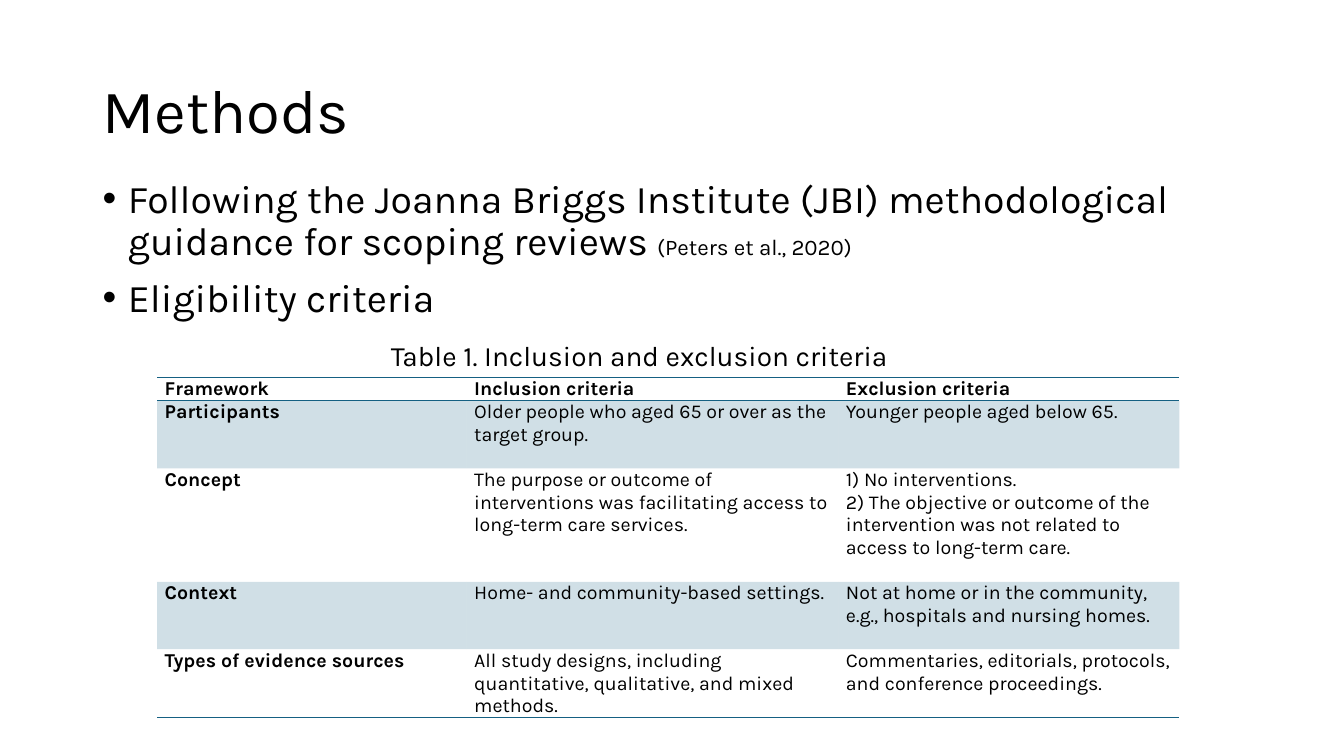
from lxml import etree
from pptx import Presentation
from pptx.dml.color import RGBColor
from pptx.enum import text
from pptx.oxml import ns
from pptx.util import Cm, Pt

BLACK = RGBColor(0, 0, 0)
BLUE = RGBColor(0x15, 0x60, 0x82)
FONT = "Karla"
NO_STYLE = "{2D5ABB26-0587-4C30-8999-92F81FD0307C}"

COLUMN_WIDTHS = [7.8, 9.37, 8.59]
ROW_HEIGHTS = [0.58, 1.7, 2.86, 1.7, 1.7]
CRITERIA = [
    ["Framework", "Inclusion criteria", "Exclusion criteria"],
    ["Participants",
     "Older people who aged 65 or over as the target group.",
     "Younger people aged below 65."],
    ["Concept",
     "The purpose or outcome of interventions was facilitating access to "
     "long-term care services.",
     "1) No interventions.\n2) The objective or outcome of the intervention "
     "was not related to access to long-term care."],
    ["Context",
     "Home- and community-based settings.",
     "Not at home or in the community, e.g., hospitals and nursing homes."],
    ["Types of evidence sources",
     "All study designs, including quantitative, qualitative, and mixed methods.",
     "Commentaries, editorials, protocols, and conference proceedings."],
]


def place(sp, left, top, width, height):
    sp.left, sp.top, sp.width, sp.height = map(Cm, (left, top, width, height))


def add_run(p, words, size, bold=False):
    r = p.add_run()
    r.text = words
    r.font.name = FONT
    r.font.size = Pt(size)
    r.font.bold = bold
    r.font.color.rgb = BLACK


def next_paragraph(tf, index):
    return tf.add_paragraph() if index else tf.paragraphs[0]


def fill_title(sp, words):
    place(sp, 2.33, 1.01, 29.21, 3.68)
    tf = sp.text_frame
    tf.auto_size = text.MSO_AUTO_SIZE.NONE
    tf.vertical_anchor = text.MSO_ANCHOR.MIDDLE
    p = tf.paragraphs[0]
    p.alignment = text.PP_ALIGN.LEFT
    p.line_spacing = 0.9
    add_run(p, words, 44)


def fill_bullets(sp, items):
    """Each item is a list of (words, size) runs."""
    place(sp, 2.33, 4.4, 29.21, 12.78)
    tf = sp.text_frame
    tf.auto_size = text.MSO_AUTO_SIZE.NONE
    for i, runs in enumerate(items):
        p = next_paragraph(tf, i)
        p.line_spacing = 0.9
        p.space_before = Pt(10)
        pPr = p._p.get_or_add_pPr()
        pPr.set("marL", str(Cm(0.64)))
        pPr.set("indent", str(Cm(-0.64)))
        for words, size in runs:
            add_run(p, words, size)


def add_caption(s, words):
    sp = s.shapes.add_textbox(Cm(9.6), Cm(8.41), Cm(14.66), Cm(1.11))
    sp.text_frame.word_wrap = True
    add_run(sp.text_frame.paragraphs[0], words, 20)


def set_borders(cell, sides):
    tcPr = cell._tc.get_or_add_tcPr()
    for i, side in enumerate(sides):
        ln = etree.Element(ns.qn("a:ln" + side), w=str(Pt(1)))
        fill = etree.SubElement(ln, ns.qn("a:solidFill"))
        etree.SubElement(fill, ns.qn("a:srgbClr"), val=str(BLUE))
        tcPr.insert(i, ln)


def shade(cell):
    """Fill the cell with blue at 20 % opacity."""
    cell.fill.solid()
    cell.fill.fore_color.rgb = BLUE
    color = cell._tc.tcPr.find(".//" + ns.qn("a:srgbClr"))
    etree.SubElement(color, ns.qn("a:alpha"), val="20000")


def fill_cell(cell, words, bold):
    cell.margin_left = cell.margin_right = Cm(0.19)
    cell.margin_top = cell.margin_bottom = 0
    for i, line in enumerate(words.split("\n")):
        add_run(next_paragraph(cell.text_frame, i), line, 14, bold)


def add_criteria_table(s):
    frame = s.shapes.add_table(
        len(ROW_HEIGHTS), len(COLUMN_WIDTHS), Cm(3.96), Cm(9.52),
        Cm(sum(COLUMN_WIDTHS)), Cm(sum(ROW_HEIGHTS)))
    table = frame.table
    table.first_row = table.horz_banding = False
    frame._element.find(".//" + ns.qn("a:tableStyleId")).text = NO_STYLE
    for column, width in zip(table.columns, COLUMN_WIDTHS):
        column.width = Cm(width)
    borders = {0: "TB", len(CRITERIA) - 1: "B"}
    for i, row in enumerate(CRITERIA):
        table.rows[i].height = Cm(ROW_HEIGHTS[i])
        for j, words in enumerate(row):
            cell = table.cell(i, j)
            fill_cell(cell, words, bold=i == 0 or j == 0)
            if i % 2:
                shade(cell)
            else:
                cell.fill.background()
            set_borders(cell, borders.get(i, ""))


def main():
    prs = Presentation()
    prs.slide_width, prs.slide_height = Cm(33.87), Cm(19.05)
    s = prs.slides.add_slide(prs.slide_layouts[1])
    fill_title(s.shapes.title, "Methods")
    fill_bullets(s.placeholders[1], [
        [("Following the Joanna Briggs Institute (JBI) methodological "
          "guidance for scoping reviews ", 28),
         ("(Peters et al., 2020)", 16)],
        [("Eligibility criteria", 28)],
    ])
    add_criteria_table(s)
    add_caption(s, "Table 1. Inclusion and exclusion criteria")
    prs.save("out.pptx")


if __name__ == "__main__":
    main()
